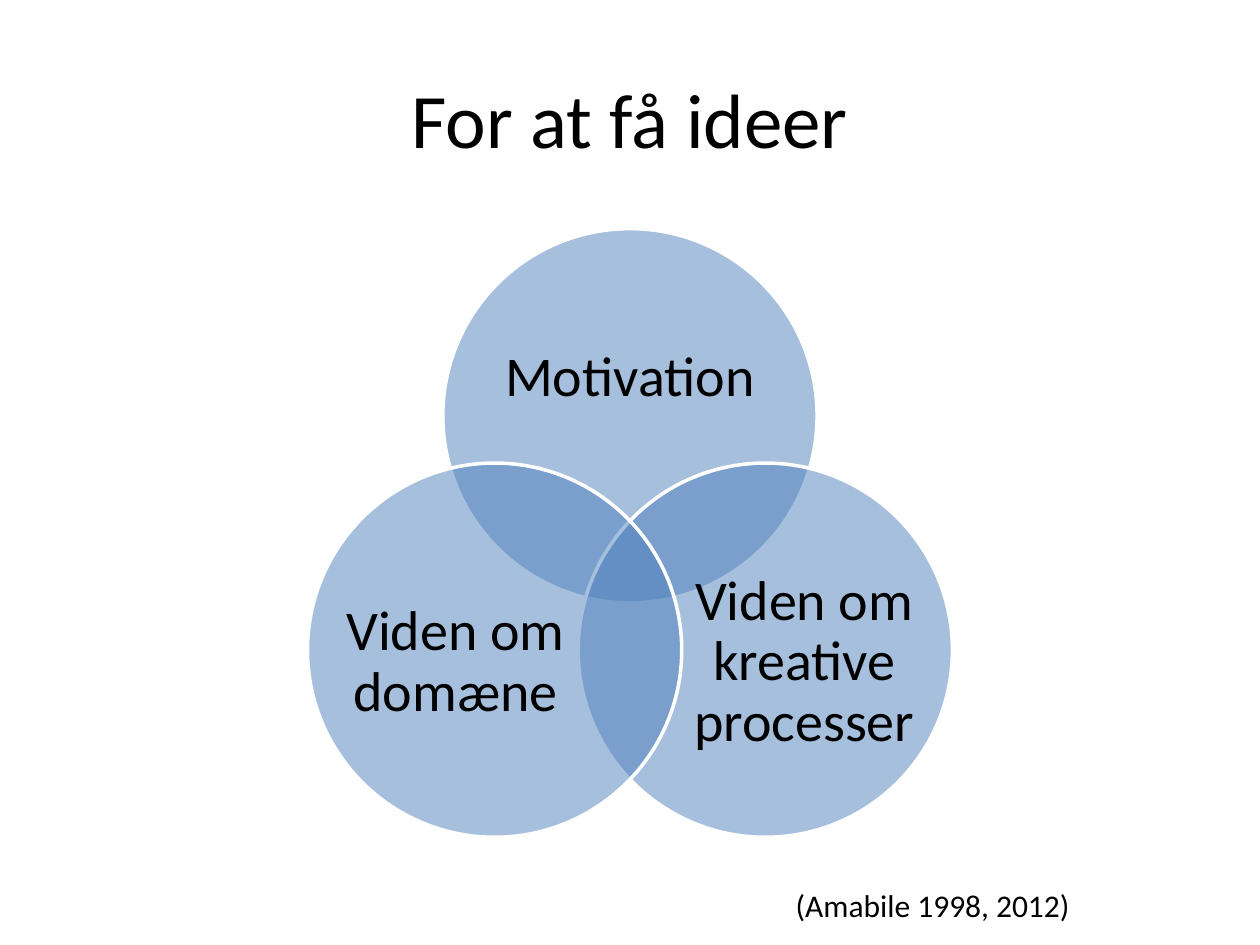
from math import cos, radians, sin

from lxml import etree
from pptx import Presentation
from pptx.dml.color import RGBColor
from pptx.enum.shapes import MSO_SHAPE
from pptx.enum.text import MSO_ANCHOR, PP_ALIGN
from pptx.oxml.ns import qn
from pptx.util import Inches, Pt

OVAL = MSO_SHAPE.OVAL
MIDDLE = MSO_ANCHOR.MIDDLE
CENTER, LEFT = PP_ALIGN.CENTER, PP_ALIGN.LEFT

FONT, BLACK, WHITE, BLUE = "Calibri", "000000", "FFFFFF", "4F81BD"
WIDTH, HEIGHT = 10, 7.5
TITLE = "For at få ideer"
CITATION = "(Amabile 1998, 2012)"
CONDITIONS = [
    {"label": "Motivation", "angle": -90, "shift": (0, -0.3), "size": (2.18, 1.34)},
    {"label": "Viden om kreative processer", "angle": 30, "shift": (0.31, 0.1), "size": (1.78, 1.63)},
    {"label": "Viden om domæne", "angle": 150, "shift": (-0.31, 0.1), "size": (1.78, 1.63)},
]
VENN_X, VENN_Y = WIDTH / 2, 4.54
DIAMETER = 2.97
SPREAD = 1.24


def color(value):
    return RGBColor.from_string(value)


def centered(x, y, width, height):
    return [Inches(v) for v in (x - width / 2, y - height / 2, width, height)]


def add_text(slide, text, box, size, align=CENTER, spacing=1.0, margins=(0, 0, 0, 0)):
    frame = slide.shapes.add_textbox(*box).text_frame
    frame.word_wrap = True
    frame.vertical_anchor = MIDDLE
    (frame.margin_left, frame.margin_top,
     frame.margin_right, frame.margin_bottom) = [Inches(m) for m in margins]
    frame.text = text
    paragraph = frame.paragraphs[0]
    paragraph.alignment = align
    paragraph.line_spacing = spacing
    font = paragraph.runs[0].font
    font.name, font.size = FONT, Pt(size)
    font.color.rgb = color(BLACK)


def add_circle(slide, x, y):
    circle = slide.shapes.add_shape(OVAL, *centered(x, y, DIAMETER, DIAMETER))
    circle.shadow.inherit = False
    circle.fill.solid()
    circle.fill.fore_color.rgb = color(BLUE)
    fill = circle.fill._xPr.find(qn("a:solidFill"))
    etree.SubElement(fill[0], qn("a:alpha"), val="50000")
    circle.line.color.rgb = color(WHITE)
    circle.line.width = Pt(2)


def main():
    deck = Presentation()
    deck.slide_width, deck.slide_height = Inches(WIDTH), Inches(HEIGHT)
    slide = deck.slides.add_slide(deck.slide_layouts[6])

    add_text(slide, TITLE, centered(WIDTH / 2, 0.93, 9, 1.25), 44)
    for condition in CONDITIONS:
        angle = radians(condition["angle"])
        x, y = VENN_X + SPREAD * cos(angle), VENN_Y + SPREAD * sin(angle)
        dx, dy = condition["shift"]
        add_circle(slide, x, y)
        add_text(slide, condition["label"], centered(x + dx, y + dy, *condition["size"]),
                 32, spacing=0.9)
    add_text(slide, CITATION, centered(7.53, 7.18, 3.31, 0.4), 18, LEFT,
             margins=(0.44, 0.05, 0.1, 0.05))

    deck.save("out.pptx")


if __name__ == "__main__":
    main()
